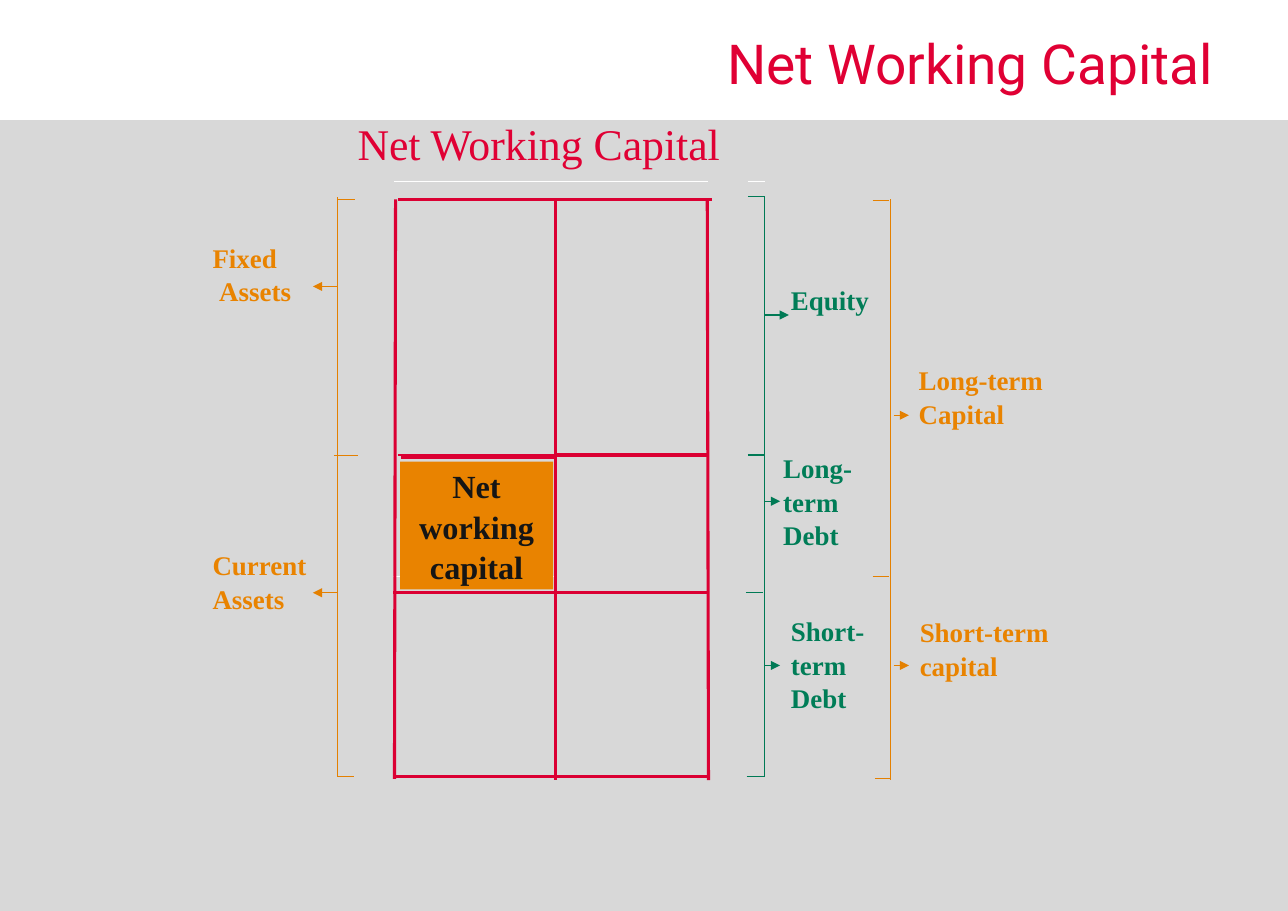
from lxml import etree
from pptx import Presentation
from pptx import util as u
from pptx.dml.color import RGBColor
from pptx.enum import shapes, text
from pptx.oxml.ns import qn

WIDTH, HEIGHT = 841.7, 595.4
RED, TITLE_RED = "DB0033", "E00034"
ORANGE, ORANGE_LINE = "E98300", "E48000"
GREEN, GREEN_LINE = "007D57", "007A55"
GREY, WHITE, BLACK = "D8D8D8", "FFFFFF", "151515"
SERIF = "Times New Roman"


def colour(value):
    return RGBColor.from_string(value)


def add_line(page, x1, y1, x2, y2, hue, weight=0.75, arrow=False):
    line = page.shapes.add_connector(
        shapes.MSO_CONNECTOR.STRAIGHT, u.Pt(x1), u.Pt(y1), u.Pt(x2), u.Pt(y2))
    line.line.color.rgb = colour(hue)
    line.line.width = u.Pt(weight)
    if arrow:
        etree.SubElement(line.line._get_or_add_ln(), qn("a:tailEnd"), type="triangle")
    etree.SubElement(line._element.spPr, qn("a:effectLst"))


def add_rectangle(page, x, y, width, height, fill):
    box = page.shapes.add_shape(
        shapes.MSO_SHAPE.RECTANGLE, u.Pt(x), u.Pt(y), u.Pt(width), u.Pt(height))
    box.shadow.inherit = False
    box.fill.solid()
    box.fill.fore_color.rgb = colour(fill)
    box.line.fill.background()
    return box


def write(box, lines, size, hue, font=SERIF, bold=False, spacing=1.0,
          align=text.PP_ALIGN.LEFT, anchor=text.MSO_ANCHOR.TOP):
    frame = box.text_frame
    frame.word_wrap = True
    frame.vertical_anchor = anchor
    for number, words in enumerate(lines):
        para = frame.add_paragraph() if number else frame.paragraphs[0]
        para.text = words
        para.alignment = align
        para.line_spacing = spacing
        para.font.name = font
        para.font.size = u.Pt(size)
        para.font.bold = bold
        para.font.color.rgb = colour(hue)


def add_text(page, x, y, width, height, lines, size, hue, **style):
    box = page.shapes.add_textbox(u.Pt(x), u.Pt(y), u.Pt(width), u.Pt(height))
    write(box, lines, size, hue, **style)
    return box


def add_label(page, x, y, width, lines, hue):
    height = 7.2 + 21.2 * len(lines)
    return add_text(page, x, y, width, height, lines, 17.6, hue, bold=True, spacing=1.04)


def add_bracket(page, x, top, bottom, ticks, arrows, hue):
    """Ticks and arrows are (start x, end x, y)."""
    add_line(page, x, top, x, bottom, hue)
    for start, end, y in ticks:
        add_line(page, start, y, end, y, hue)
    for start, end, y in arrows:
        add_line(page, start, y, end, y, hue, arrow=True)


def main():
    deck = Presentation()
    deck.slide_width, deck.slide_height = u.Pt(WIDTH), u.Pt(HEIGHT)
    page = deck.slides.add_slide(deck.slide_layouts[6])

    # Background and titles
    add_rectangle(page, 0, 78.5, WIDTH, HEIGHT - 78.5, GREY)
    add_text(page, 215.3, 14.4, 584.6, 51.8, ["Net Working Capital"], 36, TITLE_RED,
             font="Roboto", align=text.PP_ALIGN.RIGHT, anchor=text.MSO_ANCHOR.BOTTOM)
    add_text(page, 212.4, 72.7, 265, 41.8, ["Net Working Capital"], 28.6, TITLE_RED,
             align=text.PP_ALIGN.RIGHT)

    # White rules
    for start, end, y in [(257.8, 463, 118.8), (488.5, 499.7, 118.8), (257, 363, 376.6)]:
        add_line(page, start, y, end, y, WHITE)

    # Net working capital block
    block = add_rectangle(page, 261.4, 301.7, 100.1, 83.5, ORANGE)
    write(block, ["Net", "working", "capital"], 21.1, BLACK, bold=True, spacing=1.04,
          align=text.PP_ALIGN.CENTER, anchor=text.MSO_ANCHOR.MIDDLE)

    # Balance sheet grid
    for top_x, bottom_x, bottom in [(258.5, 257.8, 509), (363, 363, 509.8), (462.2, 463, 509.8)]:
        add_line(page, top_x, 130.3, bottom_x, bottom, RED, 2)
    for start, end, y in [(260, 465, 130.3), (363, 463, 297.4), (262, 363, 298.8),
                          (257, 462.2, 387.4), (257, 462.2, 507.6)]:
        add_line(page, start, y, end, y, RED, 2)
    add_line(page, 260, 297.4, 363, 297.4, RED)

    # Assets bracket
    add_bracket(page, 220.3, 129, 507.6,
                [(221, 231.8, 130.3), (218.2, 234, 298), (220.3, 231.1, 507.6)],
                [(220.3, 204.5, y) for y in (187.2, 387.4)], ORANGE_LINE)
    fixed = add_label(page, 131.8, 153.4, 80, ["Fixed", "Assets"], ORANGE)
    fixed.text_frame.paragraphs[1]._p.get_or_add_pPr().set("marL", str(u.Pt(4.4)))
    add_label(page, 131.8, 354.2, 90, ["Current", "Assets"], ORANGE)

    # Equity and debt bracket
    add_bracket(page, 499.7, 128.2, 507.6,
                [(488.7, 499.7, 128.2), (488.7, 499.7, 297.4),
                 (487.4, 498.4, 387.4), (488, 499, 507.6)],
                [(499.7, 515.5, 205.9), (499.7, 509.8, 327.6), (499.7, 509.8, 434.9)],
                GREEN_LINE)
    add_label(page, 509.8, 180.7, 75, ["Equity"], GREEN)
    add_label(page, 504.7, 290.9, 77, ["Long-", "term", "Debt"], GREEN)
    add_label(page, 509.8, 397.4, 70, ["Short-", "term", "Debt"], GREEN)

    # Capital bracket
    add_bracket(page, 581.8, 130.3, 509.8,
                [(570.2, 581, 131), (570.2, 581, 376.6), (571.7, 581.8, 509)],
                [(584, 594, y) for y in (271.4, 434.9)], ORANGE_LINE)
    add_label(page, 593.3, 233.3, 105, ["Long-term", "Capital"], ORANGE)
    add_label(page, 594, 398.2, 105, ["Short-term", "capital"], ORANGE)

    deck.save("out.pptx")


if __name__ == "__main__":
    main()
